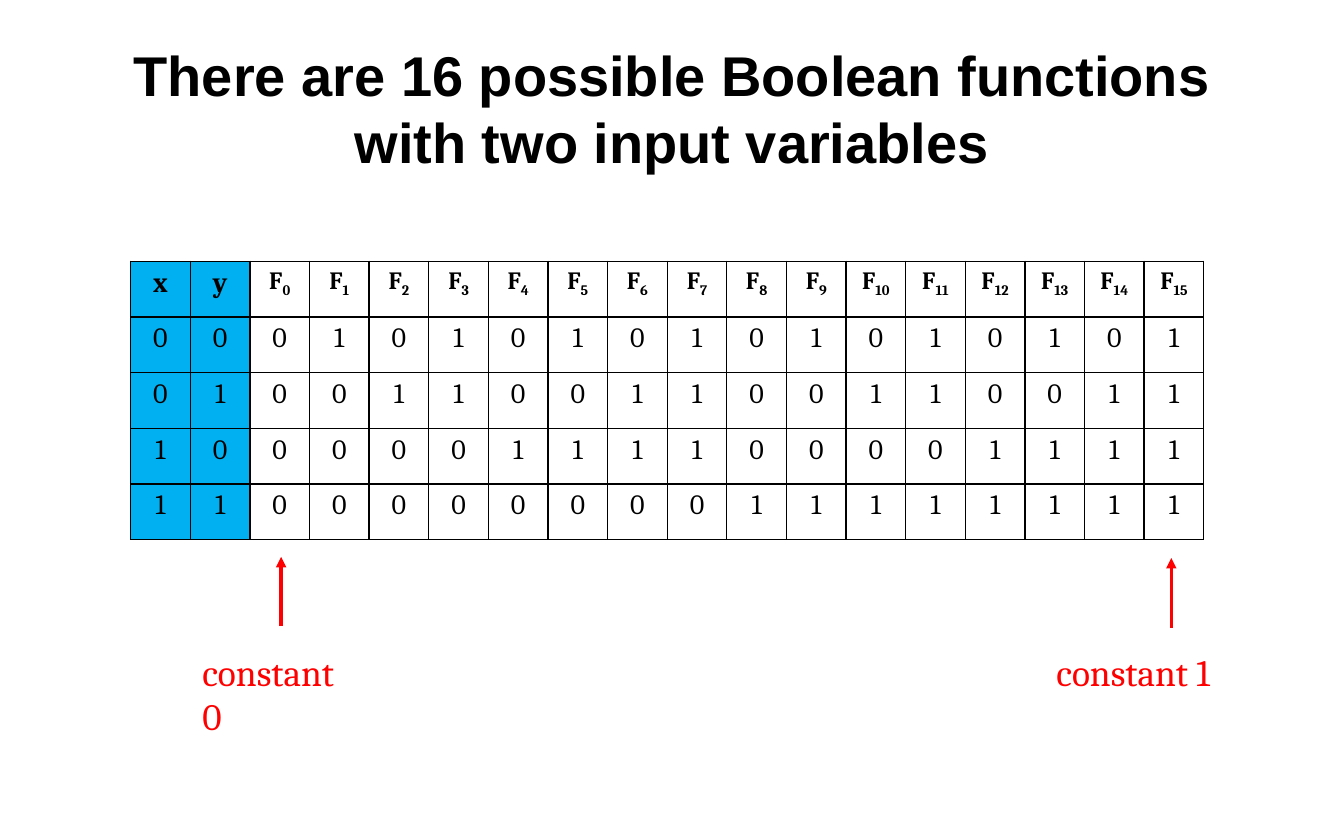
from lxml import etree
from pptx import Presentation
from pptx import util as u
from pptx.dml import color
from pptx.enum import shapes, text
from pptx.oxml import ns

COLORS = {"ink": "000000", "input": "00B0F0", "accent": "FF0000"}
FUNCTION_COUNT = 16
INPUTS = [(0, 0), (0, 1), (1, 0), (1, 1)]


def rgb(name):
    return color.RGBColor.from_string(COLORS[name])


class SlideBuilder:
    heading_font = "Arial"
    body_font = "Cambria"

    def __init__(self, slide):
        self.slide = slide

    def format_run(self, run, size, name="ink", bold=False, font=None):
        run.font.name = font or self.body_font
        run.font.size = u.Pt(size)
        run.font.bold = bold
        run.font.color.rgb = rgb(name)

    def title(self, content, left, top, width, height):
        shape = self.slide.shapes.title
        shape.left, shape.top = u.Pt(left), u.Pt(top)
        shape.width, shape.height = u.Pt(width), u.Pt(height)
        shape.text_frame.text = content
        shape.text_frame.vertical_anchor = text.MSO_ANCHOR.MIDDLE
        paragraph = shape.text_frame.paragraphs[0]
        paragraph.alignment = text.PP_ALIGN.CENTER
        for run in paragraph.runs:
            self.format_run(run, 36, bold=True, font=self.heading_font)

    def border(self, cell):
        properties = cell._tc.get_or_add_tcPr()
        for side in ("lnL", "lnR", "lnT", "lnB"):
            line = etree.SubElement(properties, ns.qn(f"a:{side}"), w=str(u.Pt(1)))
            fill = etree.SubElement(line, ns.qn("a:solidFill"))
            etree.SubElement(fill, ns.qn("a:srgbClr"), val=COLORS["ink"])

    def cell(self, cell, content, subscript="", bold=False, shaded=False):
        self.border(cell)
        if shaded:
            cell.fill.solid()
            cell.fill.fore_color.rgb = rgb("input")
        else:
            cell.fill.background()
        paragraph = cell.text_frame.paragraphs[0]
        paragraph.text = content
        paragraph.alignment = text.PP_ALIGN.CENTER
        size = 16 if subscript else 18
        self.format_run(paragraph.runs[0], size, bold=bold)
        if subscript:
            run = paragraph.add_run()
            run.text = subscript
            self.format_run(run, size, bold=bold)
            run._r.get_or_add_rPr().set("baseline", "-25000")

    def truth_table(self, left, top, width, height):
        row_count, column_count = len(INPUTS) + 1, FUNCTION_COUNT + 2
        table = self.slide.shapes.add_table(
            row_count, column_count, u.Pt(left), u.Pt(top), u.Pt(width), u.Pt(height)
        ).table
        table.first_row = table.horz_banding = False
        for column, name in enumerate("xy"):
            self.cell(table.cell(0, column), name, bold=True, shaded=True)
        for index in range(FUNCTION_COUNT):
            self.cell(table.cell(0, index + 2), "F", str(index), bold=True)
        for row, inputs in enumerate(INPUTS):
            outputs = [index >> row & 1 for index in range(FUNCTION_COUNT)]
            for column, value in enumerate([*inputs, *outputs]):
                self.cell(table.cell(row + 1, column), str(value), shaded=column < 2)

    def up_arrow(self, x, bottom, top):
        connector = self.slide.shapes.add_connector(
            shapes.MSO_CONNECTOR.STRAIGHT, u.Pt(x), u.Pt(bottom), u.Pt(x), u.Pt(top)
        )
        connector.line.color.rgb = rgb("accent")
        connector.line.width = u.Pt(2.25)
        etree.SubElement(connector.line._get_or_add_ln(), ns.qn("a:tailEnd"), type="triangle")
        etree.SubElement(connector._element.spPr, ns.qn("a:effectLst"))

    def label(self, content, left, top, width, height, wrap):
        shape = self.slide.shapes.add_textbox(u.Pt(left), u.Pt(top), u.Pt(width), u.Pt(height))
        shape.text_frame.text = content
        shape.text_frame.word_wrap = wrap
        self.format_run(shape.text_frame.paragraphs[0].runs[0], 24, "accent")


def main():
    presentation = Presentation()
    presentation.slide_width, presentation.slide_height = u.Pt(864), u.Pt(540)
    builder = SlideBuilder(presentation.slides.add_slide(presentation.slide_layouts[5]))
    builder.title(
        "There are 16 possible Boolean functions\vwith two input variables", 72, 24, 720, 90
    )
    builder.truth_table(84, 168, 690, 179)
    builder.up_arrow(180.75, 402.5, 358)
    builder.label("constant 0", 123, 413.5, 113, 36.5, wrap=True)
    builder.up_arrow(753, 403.5, 358.75)
    builder.label("constant 1", 672, 414, 113, 36.5, wrap=False)
    presentation.save("out.pptx")


if __name__ == "__main__":
    main()
